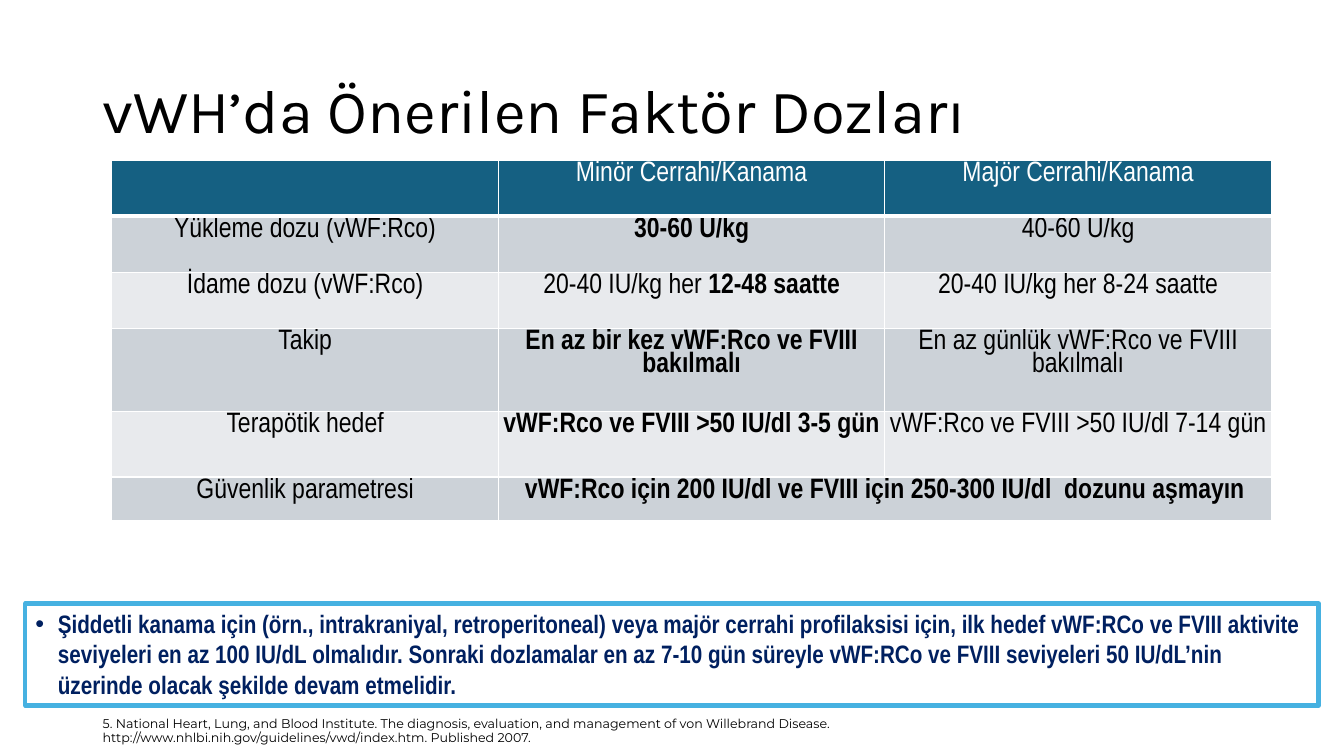
from dataclasses import dataclass

from lxml import etree
from pptx import Presentation
from pptx import util as u
from pptx.dml.color import RGBColor
from pptx.enum import shapes, text
from pptx.oxml import ns

BLACK = RGBColor(0x00, 0x00, 0x00)
WHITE = RGBColor(0xFF, 0xFF, 0xFF)
TEAL = RGBColor(0x15, 0x60, 0x82)
GREY = RGBColor(0xCC, 0xD2, 0xD8)
PALE = RGBColor(0xE8, 0xEA, 0xED)
SKY = RGBColor(0x46, 0xB1, 0xE1)
NAVY = RGBColor(0x00, 0x20, 0x60)


@dataclass(frozen=True)
class Style:
    font: str
    size: float
    color: RGBColor = BLACK
    bold: bool = False


@dataclass(frozen=True)
class Block:
    left: float
    top: float
    width: float
    height: float
    words: str
    style: Style
    spacing: float = 1.0
    anchor: text.MSO_ANCHOR = text.MSO_ANCHOR.TOP
    grow: bool = True
    framed: bool = False


@dataclass(frozen=True)
class Row:
    height: float
    cells: tuple  # a cell is a string or a tuple of strings; a leading * means bold


TITLE = Block(2.34, 1.02, 29.21, 3.68, "vWH’da Önerilen Faktör Dozları",
              Style("Karla", 44), 0.9, text.MSO_ANCHOR.MIDDLE, grow=False)
ADVICE = Block(
    0.64, 15.21, 32.59, 2.57,
    "Şiddetli kanama için (örn., intrakraniyal, retroperitoneal) veya majör cerrahi "
    "profilaksisi için, ilk hedef vWF:RCo ve FVIII aktivite seviyeleri en az 100 IU/dL "
    "olmalıdır. Sonraki dozlamalar en az 7-10 gün süreyle vWF:RCo ve FVIII seviyeleri "
    "50 IU/dL’nin üzerinde olacak şekilde devam etmelidir.",
    Style("Arial Narrow", 18, NAVY, True), framed=True)
REFERENCE = Block(
    2.34, 17.96, 22.53, 0.94,
    "5. National Heart, Lung, and Blood Institute. The diagnosis, evaluation, and "
    "management of von Willebrand Disease. "
    "http://www.nhlbi.nih.gov/guidelines/vwd/index.htm. Published 2007.",
    Style("Montserrat", 9), 0.9)

DOSES = (
    Row(1.41, ("", "Minör Cerrahi/Kanama", "Majör Cerrahi/Kanama")),
    Row(1.41, ("Yükleme dozu (vWF:Rco)", "*30-60 U/kg", "40-60 U/kg")),
    Row(1.41, ("İdame dozu (vWF:Rco)", ("20-40 IU/kg her ", "*12-48 saatte"),
               "20-40 IU/kg her 8-24 saatte")),
    Row(2.09, ("Takip", "*En az bir kez vWF:Rco ve FVIII bakılmalı",
               "En az günlük vWF:Rco ve FVIII bakılmalı")),
    Row(1.66, ("Terapötik hedef", "*vWF:Rco ve FVIII >50 IU/dl 3-5 gün ",
               "vWF:Rco ve FVIII >50 IU/dl 7-14 gün ")),
    Row(1.11, ("Güvenlik parametresi",
               "*vWF:Rco için 200 IU/dl ve FVIII için 250-300 IU/dl  dozunu aşmayın")),
)
COLUMN_WIDTH = 9.74


def set_all(target, values: dict) -> None:
    for name, value in values.items():
        setattr(target, name, value)


def add_span(para, words: str, style: Style) -> None:
    span = para.add_run()
    span.text = words
    set_all(span.font, {"name": style.font, "size": u.Pt(style.size), "bold": style.bold})
    span.font.color.rgb = style.color


def add_bullet(para, indent: float) -> None:
    props = para._p.get_or_add_pPr()
    props.set("marL", str(u.Cm(indent)))
    props.set("indent", str(-u.Cm(indent)))
    etree.SubElement(props, ns.qn("a:buFont")).set("typeface", "Arial")
    etree.SubElement(props, ns.qn("a:buChar")).set("char", "•")


def add_block(page, block: Block) -> None:
    place = [u.Cm(n) for n in (block.left, block.top, block.width, block.height)]
    if block.framed:
        box = page.shapes.add_shape(shapes.MSO_SHAPE.RECTANGLE, *place)
        box.shadow.inherit = False
        box.fill.background()
        box.line.color.rgb = SKY
        box.line.width = u.Pt(3)
    else:
        box = page.shapes.add_textbox(*place)
    fit = text.MSO_AUTO_SIZE.SHAPE_TO_FIT_TEXT if block.grow else text.MSO_AUTO_SIZE.NONE
    set_all(box.text_frame, {"word_wrap": True, "auto_size": fit,
                             "vertical_anchor": block.anchor})
    para = box.text_frame.paragraphs[0]
    set_all(para, {"alignment": text.PP_ALIGN.LEFT, "line_spacing": block.spacing})
    if block.framed:
        add_bullet(para, 0.57)
    add_span(para, block.words, block.style)


def add_borders(cell, bottom: float) -> None:
    props = cell._tc.get_or_add_tcPr()
    for side, width in {"L": 1, "R": 1, "T": 1, "B": bottom}.items():
        line = etree.SubElement(props, ns.qn(f"a:ln{side}"), w=str(u.Pt(width)))
        fill = etree.SubElement(line, ns.qn("a:solidFill"))
        etree.SubElement(fill, ns.qn("a:srgbClr")).set("val", str(WHITE))


def fill_cell(cell, words, color: RGBColor, header: bool) -> None:
    add_borders(cell, 3 if header else 1)
    cell.fill.solid()
    cell.fill.fore_color.rgb = color
    set_all(cell, {"margin_left": u.Cm(0.1), "margin_right": u.Cm(0.1),
                   "margin_top": u.Cm(0.05), "margin_bottom": u.Cm(0.05)})
    para = cell.text_frame.paragraphs[0]
    set_all(para, {"alignment": text.PP_ALIGN.CENTER, "line_spacing": 0.9})
    for part in (words,) if isinstance(words, str) else words:
        if part:
            style = Style("Arial Narrow", 20, WHITE if header else BLACK,
                          part.startswith("*"))
            add_span(para, part.removeprefix("*"), style)


def add_doses(page) -> None:
    columns = len(DOSES[0].cells)
    frame = page.shapes.add_table(
        len(DOSES), columns, u.Cm(2.82), u.Cm(4.04),
        u.Cm(columns * COLUMN_WIDTH), u.Cm(sum(row.height for row in DOSES)))
    table = frame.table
    for column in table.columns:
        column.width = u.Cm(COLUMN_WIDTH)
    for r, row in enumerate(DOSES):
        table.rows[r].height = u.Cm(row.height)
        color = TEAL if r == 0 else (PALE, GREY)[r % 2]
        for c, words in enumerate(row.cells):
            fill_cell(table.cell(r, c), words, color, r == 0)
        # A short row stretches its last cell to the table's edge
        if len(row.cells) < columns:
            table.cell(r, len(row.cells) - 1).merge(table.cell(r, columns - 1))


def main() -> None:
    deck = Presentation()
    set_all(deck, {"slide_width": u.Cm(33.87), "slide_height": u.Cm(19.05)})
    page = deck.slides.add_slide(deck.slide_layouts[6])

    # Title, dose table, advice and reference
    add_block(page, TITLE)
    add_doses(page)
    for block in (ADVICE, REFERENCE):
        add_block(page, block)
    deck.save("out.pptx")


if __name__ == "__main__":
    main()
